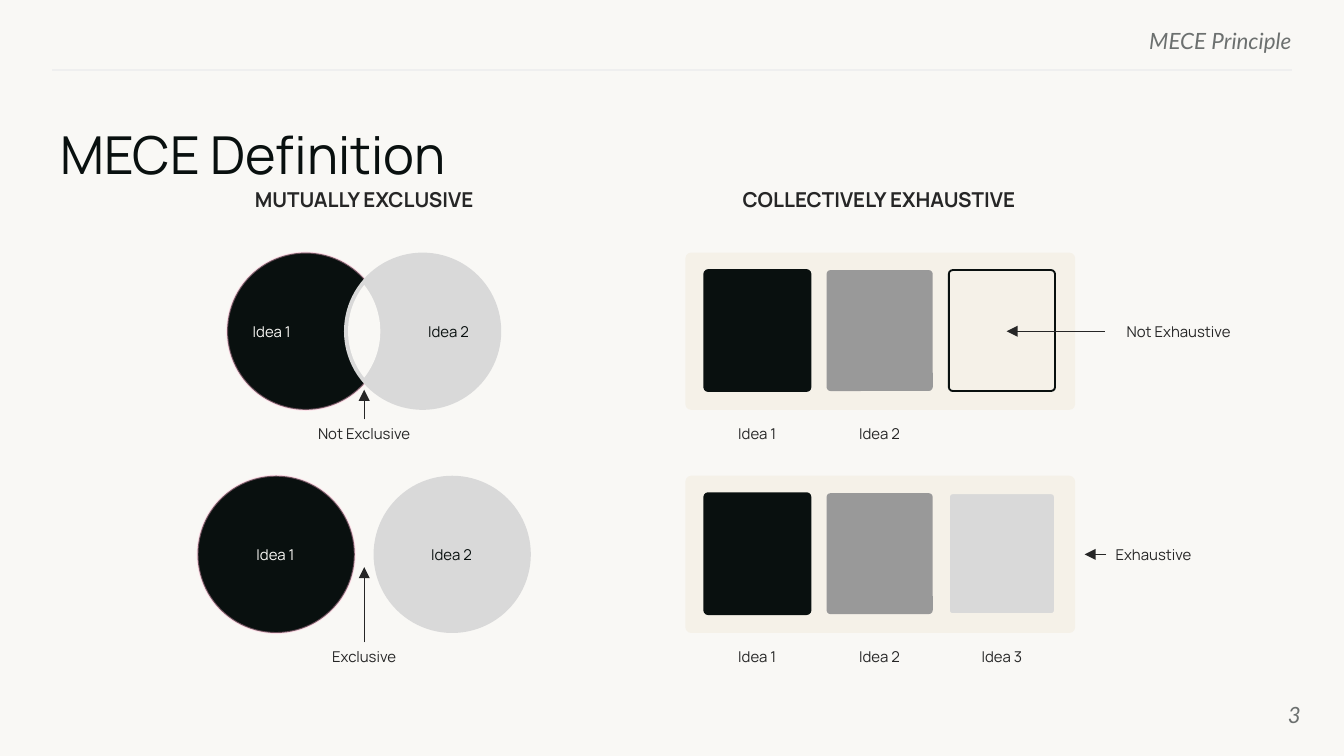
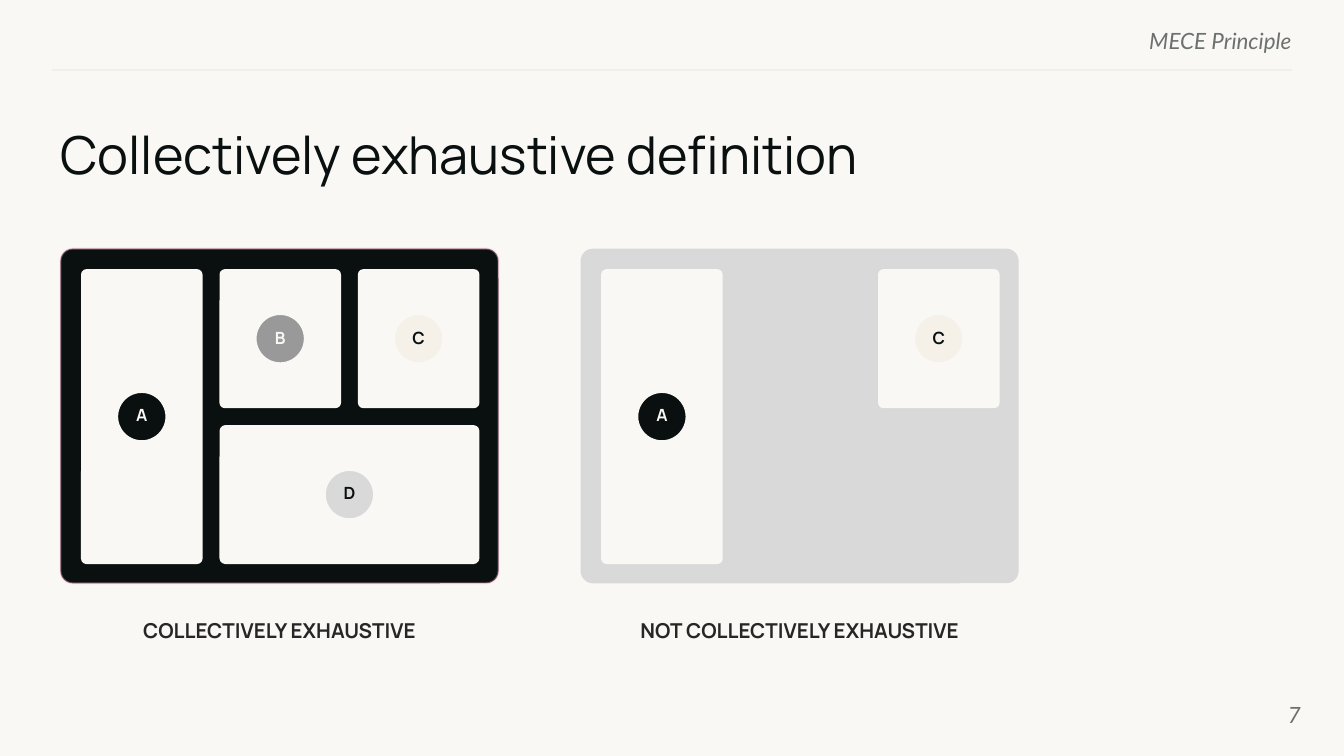
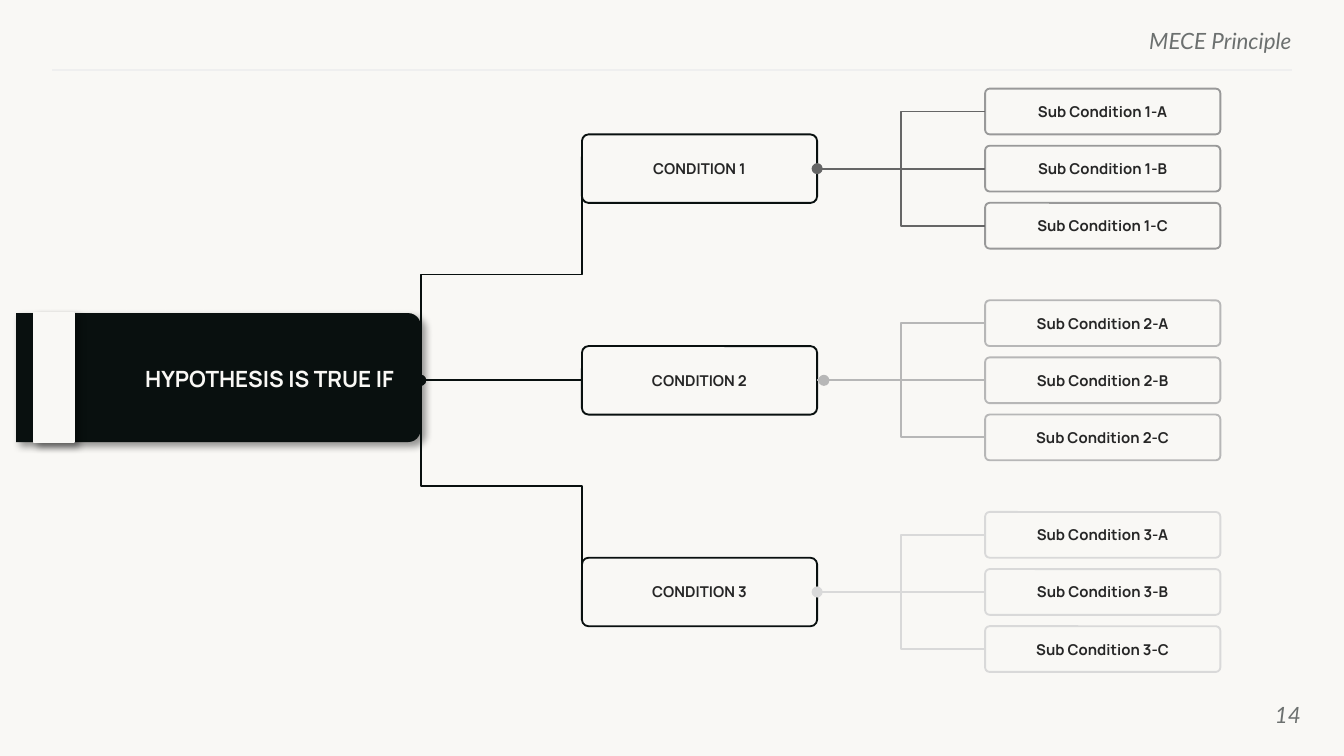
"""Build three slides that explain the MECE principle."""
from dataclasses import dataclass
from math import acos, cos, sin
from typing import NamedTuple, Optional

from lxml.etree import SubElement
from pptx import Presentation
from pptx.dml.color import RGBColor
from pptx.enum.shapes import MSO_CONNECTOR, MSO_SHAPE
from pptx.enum.text import MSO_ANCHOR, MSO_AUTO_SIZE, PP_ALIGN
from pptx.oxml.ns import qn
from pptx.util import Inches, Pt

COLUMNS, ROWS = 100, 56.25
CELL = Inches(0.1)


@dataclass(frozen=True)
class Theme:
    """Colours, fonts and type sizes of the deck."""
    paper: str = "F9F8F5"
    ink: str = "09100F"
    text: str = "262626"
    muted: str = "6C706F"
    rule: str = "EFEFEF"
    cream: str = "F5F1E8"
    pink: str = "FFB4D0"
    dark: str = "666666"
    gray: str = "999999"
    silver: str = "B7B7B7"
    light: str = "D9D9D9"
    body_font: str = "Manrope"
    footer_font: str = "Lato"
    title_size: float = 28
    footer_size: float = 12
    root_size: float = 12
    heading_size: float = 11
    badge_size: float = 9
    label_size: float = 8
    corner: float = 0.037
    node_corner: float = 0.098


THEME = Theme()


class Point(NamedTuple):
    """A place in grid cells."""
    x: float
    y: float


class Box(NamedTuple):
    """A rectangle in grid cells."""
    left: float
    top: float
    width: float
    height: float

    @property
    def center(self) -> Point:
        """Return the middle of the box."""
        return Point(self.left + self.width / 2, self.top + self.height / 2)


class Disc(NamedTuple):
    """A labelled circle of the overlap diagram."""
    left: float
    fill: str
    text: str
    label_left: float
    label_width: float
    align: PP_ALIGN


class Callout(NamedTuple):
    """A note with an arrow from the middle of one of its sides."""
    text: str
    box: Box
    side: int
    tip: Point
    align: PP_ALIGN = PP_ALIGN.CENTER


class Tile(NamedTuple):
    """A cell of a panel with its lettered badge."""
    letter: str
    column: int
    row: int
    column_span: int
    row_span: int
    badge: str
    color: str


class Branch(NamedTuple):
    """A condition's line colours and the gap before its stem."""
    stem: str
    outline: str
    gap: float


def emu(cells: float) -> int:
    """Convert grid cells to EMU."""
    return round(cells * CELL)


def centered(center: Point, width: float, height: float) -> Box:
    """Return a box around a centre."""
    return Box(center.x - width / 2, center.y - height / 2, width, height)


def write_text(shape, text: str, *, size: float = THEME.label_size, color: str = THEME.text,
               font: str = THEME.body_font, bold: bool = False, italic: bool = False,
               align: PP_ALIGN = PP_ALIGN.CENTER, anchor: MSO_ANCHOR = MSO_ANCHOR.TOP,
               inset: tuple = (0.7, 0.4, 0.7, 0.4), grow: bool = False) -> None:
    """Write one formatted paragraph into a shape."""
    frame = shape.text_frame
    frame.word_wrap = True
    frame.auto_size = MSO_AUTO_SIZE.SHAPE_TO_FIT_TEXT if grow else MSO_AUTO_SIZE.NONE
    frame.vertical_anchor = anchor
    frame.margin_left, frame.margin_top, frame.margin_right, frame.margin_bottom = map(emu, inset)
    paragraph = frame.paragraphs[0]
    paragraph.alignment = align
    run = paragraph.add_run()
    run.text = text
    run.font.size, run.font.name = Pt(size), font
    run.font.bold, run.font.italic = bold, italic
    run.font.color.rgb = RGBColor.from_string(color)


def add_text(slide, box: Box, text: str, **text_format):
    """Add a text box."""
    shape = slide.shapes.add_textbox(*map(emu, box))
    write_text(shape, text, **text_format)
    return shape


def add_label(slide, box: Box, text: str, **text_format):
    """Add a text box that fits its text."""
    return add_text(slide, box, text, grow=True, **text_format)


def add_heading(slide, center_x: float, top: float, width: float, text: str) -> None:
    """Add a bold heading centred on a column."""
    add_label(slide, Box(center_x - width / 2, top, width, 2.6), text,
              size=THEME.heading_size, bold=True)


def paint(shape, fill: Optional[str], line: Optional[str] = None, weight: float = 1) -> None:
    """Set a shape's fill and outline and drop its shadow."""
    shape.shadow.inherit = False
    if fill:
        shape.fill.solid()
        shape.fill.fore_color.rgb = RGBColor.from_string(fill)
    else:
        shape.fill.background()
    if line:
        shape.line.color.rgb = RGBColor.from_string(line)
        shape.line.width = Pt(weight)
    else:
        shape.line.fill.background()


def add_shape(slide, kind: MSO_SHAPE, box: Box, fill: Optional[str], line: Optional[str] = None,
              weight: float = 1, corners: tuple = ()):
    """Add a painted preset shape."""
    shape = slide.shapes.add_shape(kind, *map(emu, box))
    for index, corner in enumerate(corners):
        shape.adjustments[index] = corner
    paint(shape, fill, line, weight)
    return shape


def add_rounded(slide, box: Box, fill: Optional[str], line: Optional[str] = None,
                corner: float = THEME.corner):
    """Add a rounded rectangle."""
    return add_shape(slide, MSO_SHAPE.ROUNDED_RECTANGLE, box, fill, line, corners=(corner,))


def outline_pink(shape) -> None:
    """Give a shape a faint pink outline."""
    shape.line.color.rgb = RGBColor.from_string(THEME.pink)
    shape.line.width = Pt(1)
    color = shape.element.spPr.find(qn("a:ln")).find(".//" + qn("a:srgbClr"))
    SubElement(color, qn("a:alpha"), val="40000")


def cast_shadow(shape) -> None:
    """Give a shape a soft shadow to the lower right."""
    effects = shape.element.spPr.find(qn("a:effectLst"))
    shadow = SubElement(effects, qn("a:outerShdw"), blurRad=str(Pt(4)), dist=str(Pt(3)),
                        dir="2700000", algn="tl", rotWithShape="0")
    color = SubElement(shadow, qn("a:srgbClr"), val="000000")
    SubElement(color, qn("a:alpha"), val="40000")


def add_line(slide, start: Point, end: Point, color: str, weight: float = 1,
             kind: MSO_CONNECTOR = MSO_CONNECTOR.STRAIGHT, head: str = "", tail: str = ""):
    """Add a connector with optional ends."""
    connector = slide.shapes.add_connector(kind, *map(emu, (*start, *end)))
    connector.line.color.rgb = RGBColor.from_string(color)
    connector.line.width = Pt(weight)
    properties = connector.element.spPr
    for tag, style in (("a:headEnd", head), ("a:tailEnd", tail)):
        if style:
            SubElement(properties.find(qn("a:ln")), qn(tag), type=style)
    SubElement(properties, qn("a:effectLst"))
    return connector


def add_upright_elbow(slide, start: Point, end: Point, color: str) -> None:
    """Add an elbow that leaves and arrives vertically."""
    middle = Point((start.x + end.x) / 2, (start.y + end.y) / 2)
    half_run, half_rise = (end.x - start.x) / 2, (end.y - start.y) / 2
    connector = add_line(slide, Point(middle.x + half_rise, middle.y - half_run),
                         Point(middle.x - half_rise, middle.y + half_run),
                         color, kind=MSO_CONNECTOR.ELBOW, head="oval")
    connector.element.spPr.find(qn("a:xfrm")).set("rot", "16200000")


def add_base(presentation, number: int, title: str = ""):
    """Add a slide with the shared header, page number and title."""
    slide = presentation.slides.add_slide(presentation.slide_layouts[6])
    slide.background.fill.solid()
    slide.background.fill.fore_color.rgb = RGBColor.from_string(THEME.paper)
    small = dict(size=THEME.footer_size, font=THEME.footer_font, color=THEME.muted,
                 italic=True, align=PP_ALIGN.RIGHT, inset=(0, 0, 0, 0))
    add_text(slide, Box(57.6, 2, 38.5, 1.8), "MECE Principle", **small)
    add_line(slide, Point(96.1, 5.2), Point(3.9, 5.2), THEME.rule, 0.75)
    add_text(slide, Box(90.8, 51, 6, 4.3), str(number), anchor=MSO_ANCHOR.MIDDLE, **small)
    if title:
        add_text(slide, Box(4.5, 9.1, 92.3, 5.1), title, size=THEME.title_size,
                 color=THEME.ink, align=PP_ALIGN.LEFT, inset=(0, 0, 0, 0))
    return slide


def add_disc(slide, disc: Disc, top: float, diameter: float) -> None:
    """Add a circle and its label."""
    is_dark = disc.fill == THEME.ink
    circle = add_shape(slide, MSO_SHAPE.OVAL, Box(disc.left, top, diameter, diameter), disc.fill)
    if is_dark:
        outline_pink(circle)
    add_label(slide, Box(disc.label_left, top + 4.8, disc.label_width, 2.1), disc.text,
              color=THEME.paper if is_dark else THEME.ink, align=disc.align)


def add_lens(slide, left: Point, right: Point, radius: float) -> None:
    """Add the area that two circles of one radius share."""
    steps = 24
    limit = acos((right.x - left.x) / 2 / radius)
    angles = [limit * (2 * step / steps - 1) for step in range(steps + 1)]
    arcs = [(emu(center.x + sign * radius * cos(angle)), emu(center.y + sign * radius * sin(angle)))
            for center, sign in ((left, 1), (right, -1)) for angle in angles]
    builder = slide.shapes.build_freeform(*arcs[0], scale=1.0)
    builder.add_line_segments(arcs[1:], close=True)
    paint(builder.convert_to_shape(), THEME.paper)


def add_callout(slide, callout: Callout) -> None:
    """Add a note and its arrow."""
    label = add_label(slide, callout.box, callout.text, align=callout.align)
    arrow = add_line(slide, callout.box.center, callout.tip, THEME.text, 0.75, tail="triangle")
    arrow.begin_connect(label, callout.side)


def build_definition(presentation) -> None:
    """Build the slide that defines both halves of MECE."""
    slide = add_base(presentation, 3, "MECE Definition")
    add_heading(slide, 27.1, 13.5, 18.7, "MUTUALLY EXCLUSIVE")
    add_heading(slide, 65.4, 13.5, 22.8, "COLLECTIVELY EXHAUSTIVE")
    tops, diameter = (18.8, 35.4), 11.7
    disc_rows = (
        (Disc(16.9, THEME.ink, "Idea 1", 18.1, 6.2, PP_ALIGN.LEFT),
         Disc(25.6, THEME.light, "Idea 2", 29, 6.6, PP_ALIGN.RIGHT)),
        (Disc(14.7, THEME.ink, "Idea 1", 17.4, 6.2, PP_ALIGN.CENTER),
         Disc(27.8, THEME.light, "Idea 2", 30.1, 7, PP_ALIGN.CENTER)),
    )
    square_rows = (
        ((THEME.ink, THEME.ink, "Idea 1"), (THEME.gray, None, "Idea 2"), (None, THEME.ink, "")),
        ((THEME.ink, THEME.ink, "Idea 1"), (THEME.gray, None, "Idea 2"),
         (THEME.light, THEME.cream, "Idea 3")),
    )
    for top, discs, squares in zip(tops, disc_rows, square_rows):
        for disc in discs:
            add_disc(slide, disc, top, diameter)
        add_rounded(slide, Box(51, top, 29, diameter), THEME.cream)
        for index, (fill, line, text) in enumerate(squares):
            box = Box(52.4 + 9.1 * index, top + 1.3, 7.9, 9)
            add_rounded(slide, box, fill, line)
            if text:
                add_label(slide, Box(box.center.x - 3.3, top + 12.4, 6.6, 2.1), text)
    centers = [Box(disc.left, tops[0], diameter, diameter).center for disc in disc_rows[0]]
    add_lens(slide, *centers, radius=diameter / 2 - 0.3)
    for callout in (
        Callout("Not Exclusive", Box(22.95, 31.2, 8.3, 3.5), 0, Point(27.1, 29)),
        Callout("Exclusive", Box(22.55, 47.8, 9.1, 2.1), 0, Point(27.1, 42.2)),
        Callout("Not Exhaustive", Box(82.2, 23.6, 11, 2.1), 1, Point(74.9, 24.65)),
        Callout("Exhaustive", Box(82.3, 40.2, 7.9, 2.1), 1, Point(80.7, 41.25), PP_ALIGN.LEFT),
    ):
        add_callout(slide, callout)


def add_panel(slide, left: float, fill: str, tiles: list, caption: str, width: float):
    """Add a panel of lettered tiles with a caption below."""
    panel = Box(left, 18.5, 32.6, 24.9)
    frame = add_rounded(slide, panel, fill)
    for tile in tiles:
        box = Box(panel.left + 1.6 + 10.3 * tile.column, panel.top + 1.6 + 11.6 * tile.row,
                  8.9 + 10.3 * (tile.column_span - 1), 10.2 + 11.6 * (tile.row_span - 1))
        add_rounded(slide, box, THEME.paper, THEME.paper)
        badge = add_shape(slide, MSO_SHAPE.OVAL, centered(box.center, 3.8, 3.8),
                          tile.badge, THEME.paper, 2)
        write_text(badge, tile.letter, size=THEME.badge_size, color=tile.color, bold=True,
                   anchor=MSO_ANCHOR.MIDDLE, inset=(0.7, 0.2, 0.7, 0.4))
    add_heading(slide, panel.center.x, 45.6, width, caption)
    return frame


def build_exhaustive(presentation) -> None:
    """Build the slide that compares a full and a partial panel."""
    slide = add_base(presentation, 7, "Collectively exhaustive definition")
    tiles = [
        Tile("A", 0, 0, 1, 2, THEME.ink, THEME.paper),
        Tile("B", 1, 0, 1, 1, THEME.gray, THEME.paper),
        Tile("C", 2, 0, 1, 1, THEME.cream, THEME.ink),
        Tile("D", 1, 1, 2, 1, THEME.light, THEME.ink),
    ]
    full = add_panel(slide, 4.5, THEME.ink, tiles, "COLLECTIVELY EXHAUSTIVE", 22.8)
    outline_pink(full)
    add_panel(slide, 43.2, THEME.light, tiles[::2], "NOT COLLECTIVELY EXHAUSTIVE", 26.5)


def add_node(slide, box: Box, text: str, line: str):
    """Add an outlined box of the tree."""
    node = add_rounded(slide, box, THEME.paper, line, THEME.node_corner)
    write_text(node, text, bold=True, anchor=MSO_ANCHOR.MIDDLE)
    return node


def add_branch(slide, number: int, branch: Branch, root: Point) -> None:
    """Add a condition with its three sub conditions."""
    box = Box(43.3, 10 + 15.75 * (number - 1), 17.5, 5.1)
    middle = box.center.y
    condition = add_node(slide, box, f"CONDITION {number}", THEME.ink)
    entry = Point(box.left, middle)
    if number == 2:
        add_line(slide, root, entry, THEME.ink).end_connect(condition, 1)
    else:
        add_upright_elbow(slide, root, entry, THEME.ink)
    side = Point(box.left + box.width, middle)
    for letter, offset in zip("ABC", (-4.25, 0, 4.25)):
        target = Point(73.3, middle + offset)
        node = add_node(slide, Box(target.x, target.y - 1.7, 17.5, 3.4),
                        f"Sub Condition {number}-{letter}", branch.outline)
        if offset:
            line = add_line(slide, side, target, branch.stem, kind=MSO_CONNECTOR.ELBOW)
        else:
            line = add_line(slide, Point(side.x + branch.gap, middle), target, branch.stem,
                            head="oval")
        if offset or not branch.gap:
            line.begin_connect(condition, 3)
        line.end_connect(node, 1)


def build_tree(presentation) -> None:
    """Build the hypothesis tree."""
    slide = add_base(presentation, 14)
    block = Box(1.2, 23.3, 30.1, 9.6)
    root = add_shape(slide, MSO_SHAPE.ROUND_2_SAME_RECTANGLE,
                     centered(block.center, block.height, block.width), THEME.ink,
                     corners=(0.097, 0))
    root.rotation = 90
    cast_shadow(root)
    branches = (Branch(THEME.dark, THEME.gray, 0), Branch(THEME.silver, THEME.silver, 0.5),
                Branch(THEME.light, THEME.light, 0))
    for number, branch in enumerate(branches, 1):
        add_branch(slide, number, branch, Point(block.left + block.width, 28.3))
    add_label(slide, Box(10.1, 26.8, 20.5, 2.8), "HYPOTHESIS IS TRUE IF", size=THEME.root_size,
              color=THEME.paper, bold=True, align=PP_ALIGN.LEFT)
    stripe = add_shape(slide, MSO_SHAPE.RECTANGLE, Box(2.5, block.top, 3, block.height),
                       THEME.paper, THEME.paper)
    cast_shadow(stripe)


def main() -> None:
    """Build and save the deck."""
    presentation = Presentation()
    presentation.slide_width, presentation.slide_height = emu(COLUMNS), emu(ROWS)
    build_definition(presentation)
    build_exhaustive(presentation)
    build_tree(presentation)
    presentation.save("out.pptx")


if __name__ == "__main__":
    main()
